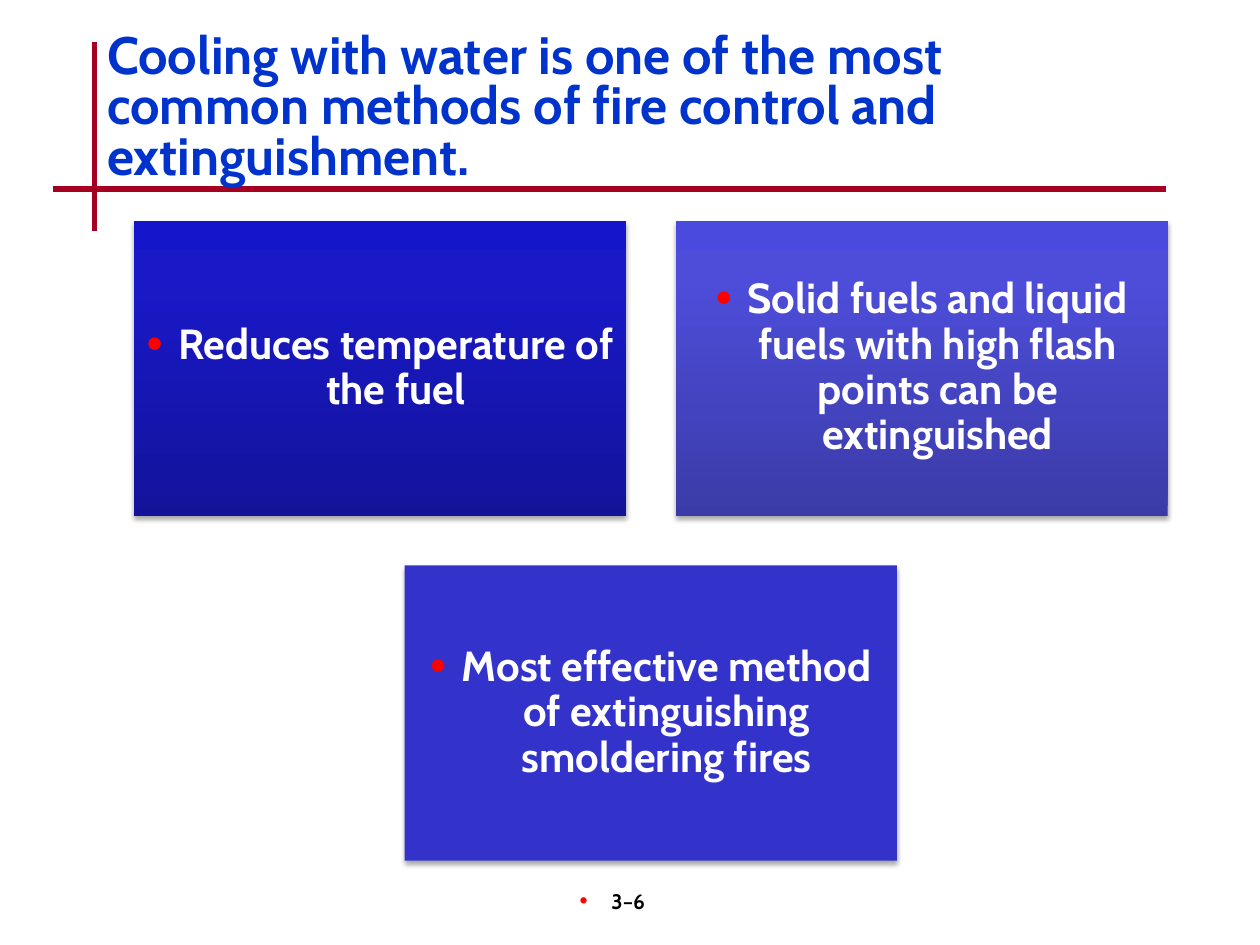
from dataclasses import dataclass

from lxml.etree import SubElement
from pptx import Presentation
from pptx.dml.color import RGBColor
from pptx.enum.shapes import MSO_CONNECTOR as Connector, MSO_SHAPE as Shape
from pptx.enum.text import MSO_ANCHOR as Anchor, PP_ALIGN as Align
from pptx.oxml.ns import qn
from pptx.util import Cm, Pt

FONT = "Cabin"
COLORS = {
    "rule": "A50021",
    "title": "0033CC",
    "bullet": "FF0000",
    "card_text": "FFFFFF",
    "page_number": "000000",
    "shadow": "000000",
}
CARD_WIDTH, CARD_HEIGHT, CARD_GAP = 9.92, 5.95, 1.0
CARDS_LEFT, CARDS_TOP = 2.7, 4.45
COLUMN_STEP = CARD_WIDTH + CARD_GAP
ROW_STEP = CARD_HEIGHT + CARD_GAP


@dataclass
class Card:
    text: str
    column: float
    row: int
    fills: tuple[str, ...]


CARDS = [
    Card("Reduces temperature of the fuel", 0, 0, ("13139A", "1919C8", "1515CC")),
    Card("Solid fuels and liquid fuels with high flash points can be extinguished",
         1, 0, ("3B3BA8", "4D4DDA", "4A4ADE")),
    Card("Most effective method of extinguishing smoldering fires", 0.5, 1, ("3333CC",)),
]


def rgb(name: str) -> RGBColor:
    return RGBColor.from_string(COLORS[name])


def add_color(parent, color: str):
    return SubElement(parent, qn("a:srgbClr"), val=color)


def add_bullet(para) -> None:
    """Give the paragraph a red hanging bullet."""
    properties = para._p.get_or_add_pPr()
    indent = Cm(0.64)
    properties.set("marL", str(indent))
    properties.set("indent", str(-indent))
    add_color(SubElement(properties, qn("a:buClr")), COLORS["bullet"])
    SubElement(properties, qn("a:buSzPct"), val="110000")
    SubElement(properties, qn("a:buFont"), typeface="Arial")
    SubElement(properties, qn("a:buChar"), char="•")


def write_text(box, text: str, size: int, color: str, line_spacing: float = 1.0,
               bulleted: bool = True) -> None:
    """Fill a box with one bold paragraph, centred when bulleted."""
    frame = box.text_frame
    frame.word_wrap = True
    frame.text = text
    para = frame.paragraphs[0]
    para.alignment = Align.CENTER if bulleted else Align.LEFT
    para.line_spacing = line_spacing
    if bulleted:
        add_bullet(para)
    for span in para.runs:
        span.font.name = FONT
        span.font.size = Pt(size)
        span.font.bold = True
        span.font.color.rgb = rgb(color)


def add_rule(page, x1: float, y1: float, x2: float, y2: float) -> None:
    rule = page.shapes.add_connector(Connector.STRAIGHT, Cm(x1), Cm(y1), Cm(x2), Cm(y2))
    rule.line.color.rgb = rgb("rule")
    rule.line.width = Pt(3)
    SubElement(rule._element.spPr, qn("a:effectLst"))


def fill_card(box, fills: tuple[str, ...]) -> None:
    """Use a solid fill for one colour, a bottom-to-top gradient for three."""
    if len(fills) == 1:
        box.fill.solid()
        box.fill.fore_color.rgb = RGBColor.from_string(fills[0])
        return
    box.fill.gradient()
    box.fill.gradient_angle = 90
    stops = box._element.spPr.find(".//" + qn("a:gsLst"))
    for stop in list(stops):
        stops.remove(stop)
    for percent, color in zip((0, 80, 100), fills):
        add_color(SubElement(stops, qn("a:gs"), pos=str(percent * 1000)), color)


def add_shadow(box) -> None:
    box.shadow.inherit = False
    effects = box._element.spPr.find(qn("a:effectLst"))
    shadow = SubElement(effects, qn("a:outerShdw"), blurRad=str(Pt(3.1)),
                        dist=str(Pt(1.8)), dir="5400000", rotWithShape="0")
    SubElement(add_color(shadow, COLORS["shadow"]), qn("a:alpha"), val="35000")


def add_card(page, card: Card) -> None:
    box = page.shapes.add_shape(
        Shape.RECTANGLE,
        Cm(CARDS_LEFT + card.column * COLUMN_STEP), Cm(CARDS_TOP + card.row * ROW_STEP),
        Cm(CARD_WIDTH), Cm(CARD_HEIGHT))
    fill_card(box, card.fills)
    box.line.fill.background()
    add_shadow(box)
    frame = box.text_frame
    frame.vertical_anchor = Anchor.MIDDLE
    frame.margin_left = frame.margin_right = Cm(0.25)
    frame.margin_top = frame.margin_bottom = Cm(0.25)
    write_text(box, card.text, 24, "card_text", line_spacing=0.9)


def main() -> None:
    deck = Presentation()
    deck.slide_width, deck.slide_height = Cm(25.4), Cm(19.05)
    page = deck.slides.add_slide(deck.slide_layouts[6])

    add_rule(page, 1.91, 0.85, 1.91, 4.66)
    add_rule(page, 1.06, 3.81, 23.5, 3.81)

    page_number = page.shapes.add_textbox(Cm(9.7), Cm(17.78), Cm(5.29), Cm(1.27))
    write_text(page_number, "3–6", 12, "page_number")

    title = page.shapes.add_textbox(Cm(1.91), Cm(0.56), Cm(21.59), Cm(2.54))
    write_text(title, "Cooling with water is one of the most common methods of "
               "fire control and extinguishment.", 30, "title",
               line_spacing=0.8, bulleted=False)

    for card in CARDS:
        add_card(page, card)

    deck.save("out.pptx")


if __name__ == "__main__":
    main()
